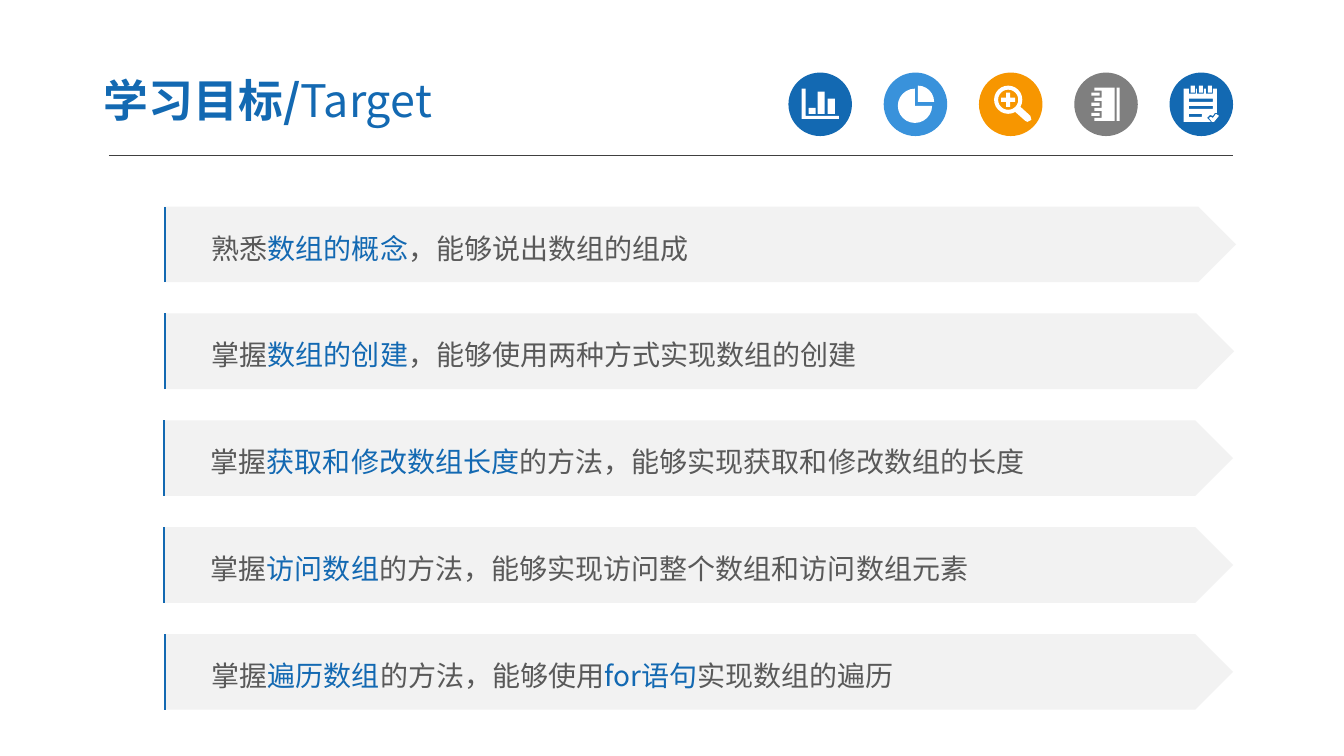
from math import cos, radians, sin
from lxml.etree import SubElement
from pptx import Presentation
from pptx.dml.color import RGBColor
from pptx.enum.shapes import MSO_CONNECTOR as Link, MSO_SHAPE as Form
from pptx.enum.text import MSO_ANCHOR as Anchor, PP_ALIGN as Align
from pptx.oxml.ns import qn
from pptx.util import Inches, Pt

FONT = "Noto Sans CJK SC"
COLORS = {
    "blue": "1369B2", "sky": "3992DB", "orange": "F79600", "gray": "7F7F7F",
    "white": "FFFFFF", "pale": "F2F2F2", "text": "595959", "rule": "404040",
}
GOALS = [
    (1.63, 10.63, [("熟悉", "text"), ("数组的概念", "blue"),
                   ("，能够说出数组的组成", "text")]),
    (1.63, 10.61, [("掌握", "text"), ("数组的创建", "blue"),
                   ("，能够使用两种方式实现数组的创建", "text")]),
    (1.62, 10.61, [("掌握", "text"), ("获取和修改数组长度", "blue"),
                   ("的方法，能够实现获取和修改数组的长度", "text")]),
    (1.62, 10.61, [("掌握", "text"), ("访问数组", "blue"),
                   ("的方法，能够实现访问整个数组和访问数组元素", "text")]),
    (1.63, 10.6, [("掌握", "text"), ("遍历数组", "blue"),
                  ("的方法，能够使用", "text"), ("for语句", "blue"),
                  ("实现数组的遍历", "text")]),
]


def color(name):
    """Return the named colour."""
    return RGBColor.from_string(COLORS[name])


def add_run(para, text, tone, size, bold=False):
    """Append one styled run to a paragraph."""
    run = para.add_run()
    run.text = text
    run.font.size = Pt(size)
    run.font.bold = bold
    run.font.color.rgb = color(tone)
    run.font.name = FONT
    SubElement(run.font._element, qn("a:ea")).set("typeface", FONT)


def paint(shape, tone):
    """Give a shape a flat fill without outline or shadow."""
    shape.shadow.inherit = False
    shape.fill.solid()
    shape.fill.fore_color.rgb = color(tone)
    shape.line.fill.background()


def add_form(shapes, form, box, tone):
    """Add a flat preset shape."""
    shape = shapes.add_shape(form, *map(Inches, box))
    paint(shape, tone)
    return shape


def add_path(shapes, left, top, loops, close=True):
    """Add one freeform made of several outlines."""
    build = None
    for loop in loops:
        dots = [(Inches(left + x), Inches(top + y)) for x, y in loop]
        if build is None:
            build = shapes.build_freeform(*dots[0])
        else:
            build.move_to(*dots[0])
        build.add_line_segments(dots[1:], close=close)
    return build.convert_to_shape()


def add_rule(shapes):
    """Add the thin line under the title."""
    line = shapes.add_connector(
        Link.STRAIGHT, *map(Inches, (1.08, 1.54, 12.23, 1.54)))
    line.line.color.rgb = color("rule")
    line.line.width = Pt(0.75)
    SubElement(line._element.spPr, qn("a:effectLst"))


def add_title(slide):
    """Place and fill the slide title."""
    title = slide.shapes.title
    title.left, title.top = Inches(0.9), Inches(0.63)
    title.width, title.height = Inches(5.22), Inches(0.72)
    frame = title.text_frame
    frame.margin_left = frame.margin_right = Inches(0.13)
    frame.margin_top = frame.margin_bottom = Inches(0.07)
    frame.vertical_anchor = Anchor.MIDDLE
    para = frame.paragraphs[0]
    para.alignment = Align.LEFT
    add_run(para, "学习目标/", "blue", 32, True)
    add_run(para, "Target", "blue", 32)


def add_goal(shapes, left, top, wide, parts):
    """Add one goal banner with its accent line."""
    high = 0.75
    group = shapes.add_group_shape().shapes
    banner = add_form(group, Form.PENTAGON, (left, top, wide, high), "pale")
    frame = banner.text_frame
    frame.word_wrap = True
    frame.margin_left = Inches(0.47)
    frame.vertical_anchor = Anchor.MIDDLE
    para = frame.paragraphs[0]
    para.alignment = Align.LEFT
    para.line_spacing = 1.2
    for text, tone in parts:
        add_run(para, text, tone, 20)
    edge = add_path(group, left + 0.01, top, [[(0, high), (0, 0)]], False)
    edge.shadow.inherit = False
    edge.fill.background()
    edge.line.color.rgb = color("blue")
    edge.line.width = Pt(1.5)


def add_badge(shapes, left, tone, loops):
    """Add a round badge with a white symbol."""
    group = shapes.add_group_shape().shapes
    add_form(group, Form.OVAL, (left, 0.72, 0.63, 0.63), tone)
    paint(add_path(group, left, 0.72, loops), "white")


def rect(x, y, wide, high):
    """Return the corners of a rectangle."""
    return [(x, y), (x + wide, y), (x + wide, y + high), (x, y + high)]


def arc(x, y, size, start, end):
    """Return points along an arc, in degrees clockwise from the right."""
    count = round((end - start) / 15)
    turns = [radians(start + 15 * step) for step in range(count + 1)]
    return [(x + size * cos(turn), y + size * sin(turn)) for turn in turns]


def bars():
    """Outline a bar chart."""
    axis = [(0.13, 0.16), (0.17, 0.16), (0.17, 0.43), (0.5, 0.43),
            (0.5, 0.46), (0.13, 0.46)]
    sizes = ((0.2, 0.06), (0.29, 0.22), (0.39, 0.15))
    return [axis] + [rect(x, 0.41 - high, 0.07, high) for x, high in sizes]


def pie():
    """Outline a pie chart with one slice set apart."""
    return [[(0.34, 0.29)] + arc(0.34, 0.29, 0.16, 270, 360),
            [(0.31, 0.33)] + arc(0.31, 0.33, 0.17, 0, 270)]


def lens():
    """Outline a magnifier with a plus."""
    handle = [(0.51, 0.43), (0.52, 0.47), (0.48, 0.49), (0.46, 0.48)]
    far, near = 0.07, 0.02
    plus = [(-near, -far), (near, -far), (near, -near), (far, -near),
            (far, near), (near, near), (near, far), (-near, far),
            (-near, near), (-far, near), (-far, -near), (-near, -near)]
    return [arc(0.29, 0.27, 0.14, 60, 390) + handle,
            arc(0.29, 0.27, 0.1, 0, 345),
            [(0.29 + x, 0.27 + y) for x, y in plus]]


def book():
    """Outline a ring notebook."""
    cover = [(0.4, 0.48), (0.4, 0.15), (0.2, 0.15)]
    rings = []
    for row in range(3):
        y = 0.18 + 0.1 * row
        cover += [(0.2, y), (0.27, y), (0.27, y + 0.07), (0.2, y + 0.07)]
        rings.append(rect(0.17, y + 0.02, 0.08, 0.03))
    return [cover + [(0.2, 0.48)], rect(0.42, 0.15, 0.03, 0.33)] + rings


def notes():
    """Outline a checklist."""
    page, rings = [(0.14, 0.16)], []
    for x in (0.19, 0.27, 0.36):
        page += [(x, 0.16), (x, 0.21), (x + 0.07, 0.21), (x + 0.07, 0.16)]
        rings.append(rect(x + 0.02, 0.13, 0.04, 0.07))
    page += [(0.47, 0.16), (0.47, 0.4), (0.45, 0.4), (0.43, 0.43),
             (0.4, 0.42), (0.37, 0.45), (0.41, 0.49), (0.14, 0.49)]
    check = [(0.39, 0.45), (0.41, 0.44), (0.43, 0.45), (0.46, 0.41),
             (0.49, 0.43), (0.44, 0.49), (0.42, 0.49)]
    rows = [rect(0.19, y, wide, 0.03)
            for y, wide in ((0.26, 0.24), (0.33, 0.24), (0.41, 0.13))]
    return [page, check] + rings + rows


def main():
    """Build and save the slide."""
    deck = Presentation()
    deck.slide_width, deck.slide_height = Inches(13.33), Inches(7.5)
    slide = deck.slides.add_slide(deck.slide_layouts[5])
    add_title(slide)
    add_rule(slide.shapes)
    badges = [("blue", bars), ("sky", pie), ("orange", lens),
              ("gray", book), ("blue", notes)]
    step = (11.6 - 7.82) / (len(badges) - 1)
    for col, (tone, draw) in enumerate(badges):
        add_badge(slide.shapes, 7.82 + step * col, tone, draw())
    for row, (left, wide, parts) in enumerate(GOALS):
        add_goal(slide.shapes, left, 2.05 + 1.06 * row, wide, parts)
    deck.save("out.pptx")


if __name__ == "__main__":
    main()
